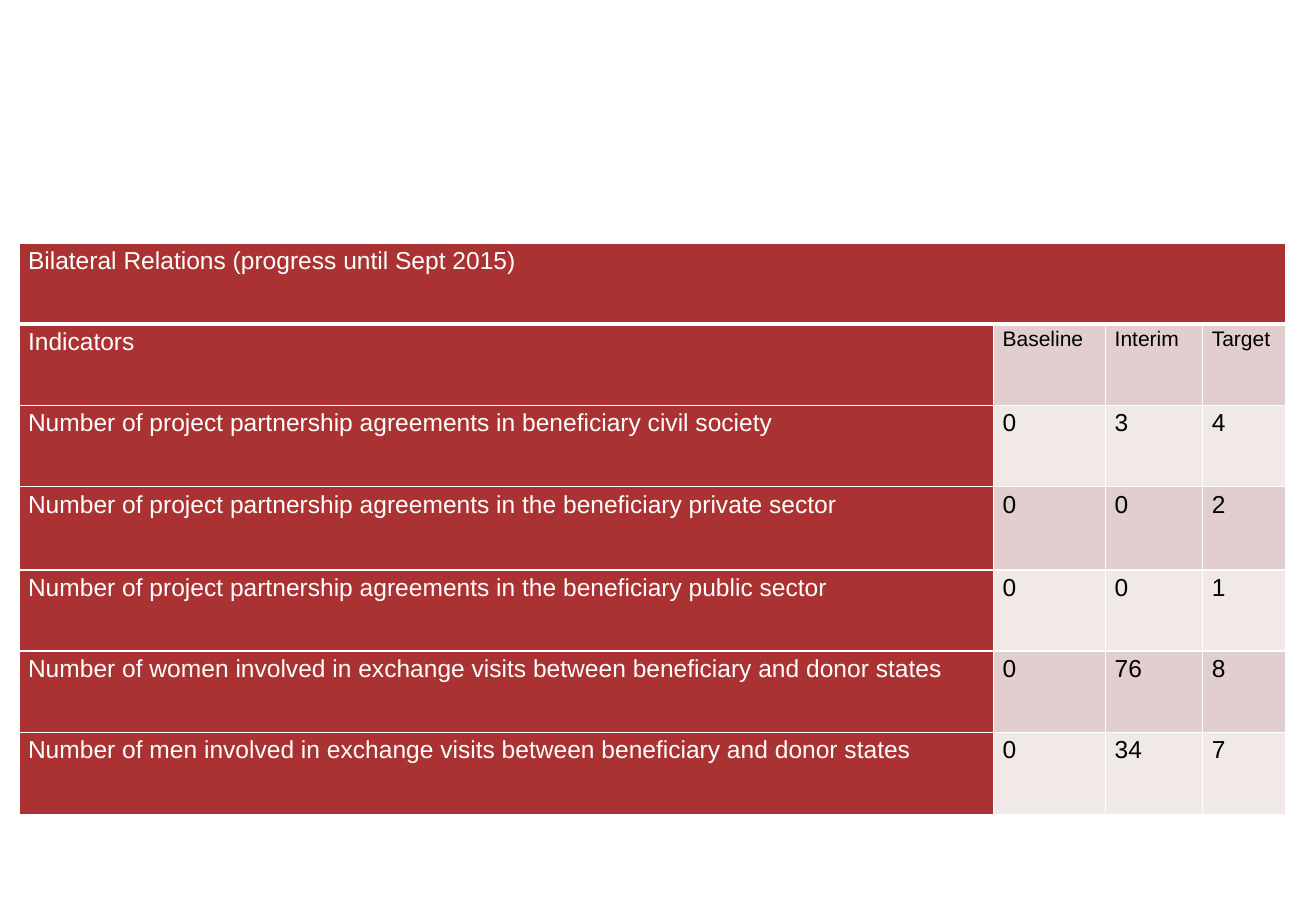
from typing import NamedTuple

from lxml.etree import SubElement
from pptx import Presentation
from pptx.dml.color import RGBColor as RGB
from pptx.oxml.ns import qn
from pptx.table import _Cell as Cell
from pptx.util import Pt

COLORS = {
    "red": "AA3232",
    "rose": "E2CECE",
    "pale": "F1E8E8",
    "white": "FFFFFF",
    "black": "000000",
}
COL_WIDTHS = [556.2, 64, 55.4, 47.3]
ROW_HEIGHTS = [46.4, 46.4, 46.4, 47.4, 46.4, 46.4, 46.8]


class Row(NamedTuple):
    label: str
    values: tuple[str, ...] = ("", "", "")
    size: float = 14


ROWS = [
    Row("Bilateral Relations (progress until Sept 2015)"),
    Row("Indicators", ("Baseline", "Interim", "Target"), 12),
    Row("Number of project partnership agreements in beneficiary civil society", ("0", "3", "4")),
    Row("Number of project partnership agreements in the beneficiary private sector", ("0", "0", "2")),
    Row("Number of project partnership agreements in the beneficiary public sector", ("0", "0", "1")),
    Row("Number of women involved in exchange visits between beneficiary and donor states", ("0", "76", "8")),
    Row("Number of men involved in exchange visits between beneficiary and donor states", ("0", "34", "7")),
]


def set_borders(cell: Cell, bottom: float = 1) -> None:
    tc_pr = cell._tc.get_or_add_tcPr()
    for side, width in {"L": 1, "R": 1, "T": 1, "B": bottom}.items():
        ln = SubElement(tc_pr, qn(f"a:ln{side}"), w=str(Pt(width)))
        fill = SubElement(ln, qn("a:solidFill"))
        SubElement(fill, qn("a:srgbClr"), val=COLORS["white"])


def write_text(cell: Cell, text: str, *, size: float = 14, color: str = "black") -> None:
    p = cell.text_frame.paragraphs[0]
    p.line_spacing = 1.15
    p.space_after = Pt(10)
    p.font.size = Pt(size)
    r = p.add_run()
    r.text = text
    r.font.name = "Arial"
    r.font.size = Pt(size)
    r.font.bold = False
    r.font.color.rgb = RGB.from_string(COLORS[color])


def format_cell(cell: Cell, fill: str, bottom: float) -> None:
    cell.margin_left = cell.margin_right = Pt(5.2)
    cell.margin_top = cell.margin_bottom = Pt(0)
    set_borders(cell, bottom)
    cell.fill.solid()
    cell.fill.fore_color.rgb = RGB.from_string(COLORS[fill])


def main() -> None:
    prs = Presentation()
    prs.slide_width, prs.slide_height = Pt(751), Pt(524.2)
    s = prs.slides.add_slide(prs.slide_layouts[6])
    table = s.shapes.add_table(
        len(ROWS), len(COL_WIDTHS), Pt(10.8), Pt(138.5), Pt(sum(COL_WIDTHS)), Pt(sum(ROW_HEIGHTS))
    ).table
    for column, width in zip(table.columns, COL_WIDTHS):
        column.width = Pt(width)
    for line, height in zip(table.rows, ROW_HEIGHTS):
        line.height = Pt(height)

    for i, row in enumerate(ROWS):
        band = "rose" if i % 2 else "pale"
        for j, text in enumerate((row.label, *row.values)):
            cell = table.cell(i, j)
            is_header = i == 0 or j == 0
            format_cell(cell, "red" if is_header else band, 3 if i == 0 else 1)
            if text:
                write_text(
                    cell,
                    text,
                    size=row.size if j else 14,
                    color="white" if is_header else "black",
                )
    table.cell(0, 0).merge(table.cell(0, len(COL_WIDTHS) - 1))
    prs.save("out.pptx")


if __name__ == "__main__":
    main()
